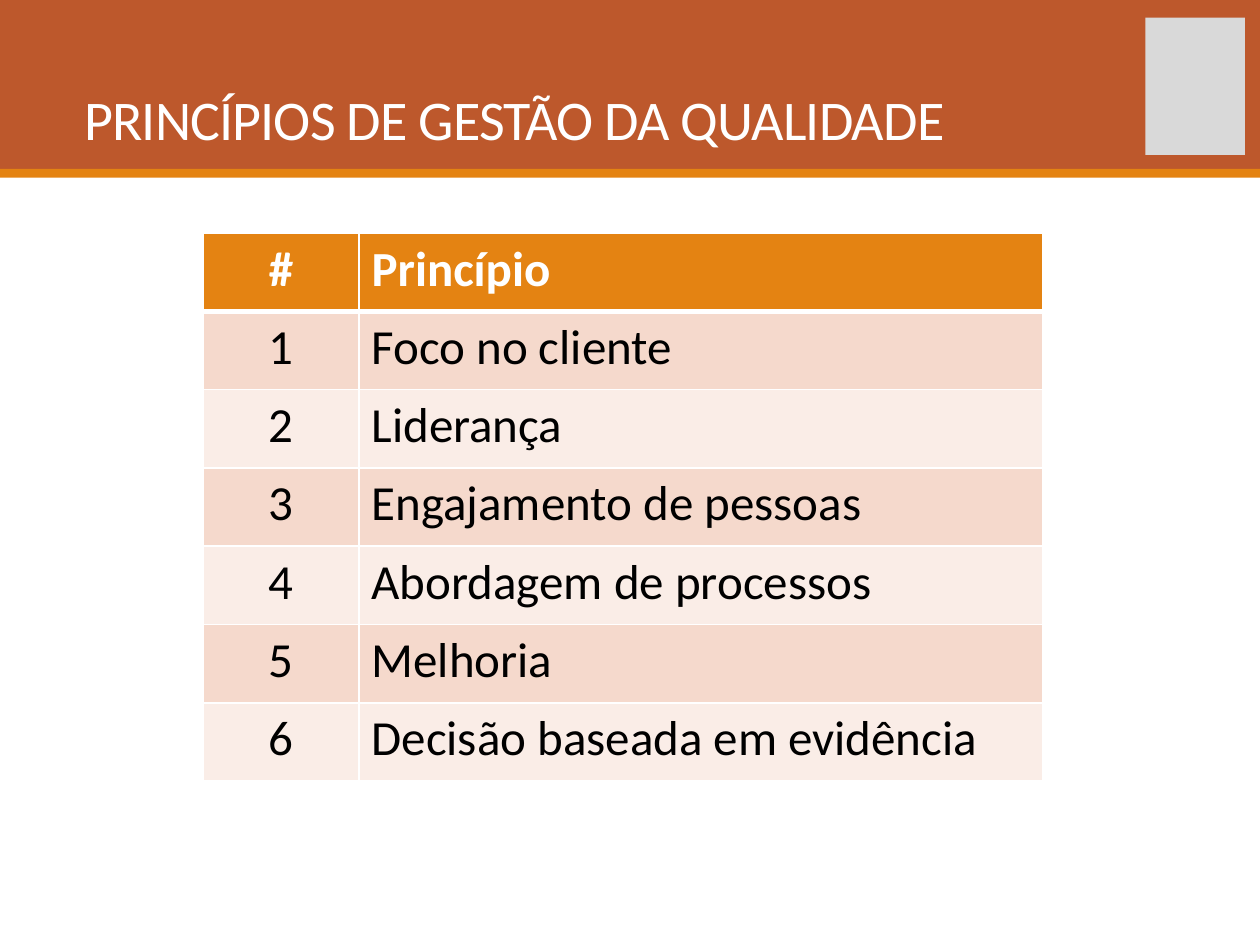
from lxml.etree import SubElement
from pptx import Presentation
from pptx.dml.color import RGBColor as RGB
from pptx.enum.shapes import MSO_SHAPE as SHAPE
from pptx.enum.text import MSO_ANCHOR as ANCHOR, PP_ALIGN as ALIGN
from pptx.oxml.ns import qn
from pptx.util import Inches, Pt

TITLE = "PRINCÍPIOS DE GESTÃO DA QUALIDADE"
HEADER = ("#", "Princípio")
PRINCIPLES = [
    "Foco no cliente",
    "Liderança",
    "Engajamento de pessoas",
    "Abordagem de processos",
    "Melhoria",
    "Decisão baseada em evidência",
]
FONT = "Calibri"
COLORS = {
    "banner": "BD582C",
    "accent": "E48312",
    "logo": "D9D9D9",
    "odd": "F5D9CC",
    "even": "FAEDE7",
    "white": "FFFFFF",
    "black": "000000",
}
BLOCKS = [
    ("banner", 0, 0, 10, 1.34),
    ("accent", 0, 1.34, 10, 0.07),
    ("logo", 9.09, 0.14, 0.79, 1.09),
]
COL_WIDTHS = (1.24, 5.43)
TABLE_LEFT, TABLE_TOP, TABLE_HEIGHT = 1.61, 1.85, 4.35


def color(name):
    return RGB.from_string(COLORS[name])


def add_run(p, text, size, color_name, bold=False):
    r = p.add_run()
    r.text = text
    r.font.name, r.font.size, r.font.bold = FONT, Pt(size), bold
    r.font.color.rgb = color(color_name)
    return r


def set_borders(cell, widths):
    tc_pr = cell._tc.get_or_add_tcPr()
    for side, width in zip("LRTB", widths):
        ln = SubElement(tc_pr, qn(f"a:ln{side}"), w=str(Pt(width)))
        fill = SubElement(ln, qn("a:solidFill"))
        SubElement(fill, qn("a:srgbClr"), val=COLORS["white"])


prs = Presentation()
prs.slide_width, prs.slide_height = Inches(10), Inches(7.5)
slide = prs.slides.add_slide(prs.slide_layouts[6])

# Banner, accent strip and logo block
for name, *box in BLOCKS:
    s = slide.shapes.add_shape(SHAPE.RECTANGLE, *map(Inches, box))
    s.shadow.inherit = False
    s.fill.solid()
    s.fill.fore_color.rgb = color(name)
    s.line.fill.background()

# Table of principles
rows = [HEADER] + [(str(n), text) for n, text in enumerate(PRINCIPLES, 1)]
table = slide.shapes.add_table(
    len(rows), len(HEADER), Inches(TABLE_LEFT), Inches(TABLE_TOP),
    Inches(sum(COL_WIDTHS)), Inches(TABLE_HEIGHT)).table
for column, width in zip(table.columns, COL_WIDTHS):
    column.width = Inches(width)

for i, row in enumerate(rows):
    is_header = i == 0
    fill_name = "accent" if is_header else "odd" if i % 2 else "even"
    top, bottom = (3 if i == 1 else 1), (3 if is_header else 1)
    for j, text in enumerate(row):
        cell = table.cell(i, j)
        set_borders(cell, (1, 1, top, bottom))
        cell.fill.solid()
        cell.fill.fore_color.rgb = color(fill_name)
        p = cell.text_frame.paragraphs[0]
        p.alignment = ALIGN.LEFT if j else ALIGN.CENTER
        add_run(p, text, 28, "white" if is_header else "black", is_header)

# Title
sp = slide.shapes.add_textbox(Inches(0.57), Inches(0.33), Inches(8.51), Inches(0.88))
tf = sp.text_frame
tf.word_wrap = True
tf.vertical_anchor = ANCHOR.BOTTOM
tf.margin_top = tf.margin_bottom = 0
p = tf.paragraphs[0]
p.line_spacing = 0.85
r = add_run(p, TITLE, 32, "white")
r.font._element.set("spc", "-50")

prs.save("out.pptx")
